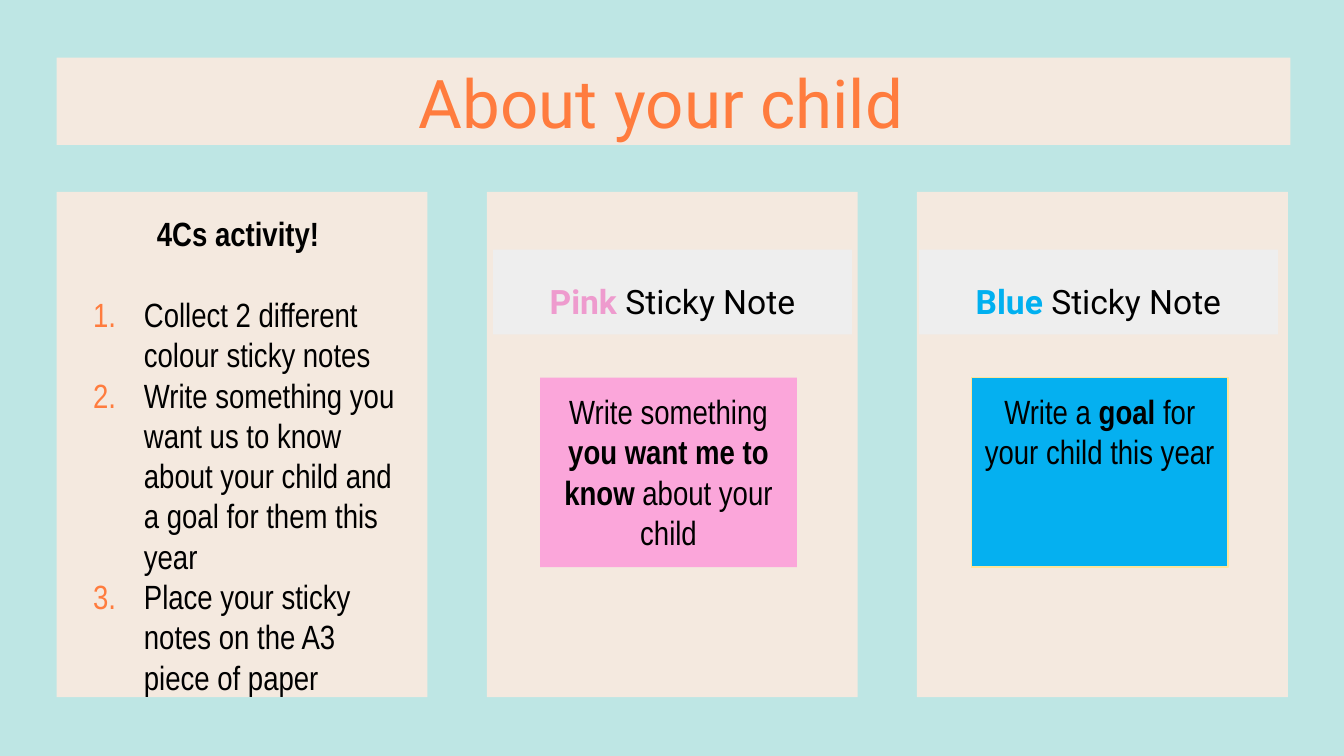
"""Build the slide about the sticky note activity for parents."""
import pptx
import pptx.dml.color
import pptx.enum.shapes
import pptx.enum.text
import pptx.oxml
import pptx.oxml.ns
import pptx.util

Cm, Pt = pptx.util.Cm, pptx.util.Pt
Align, Anchor = pptx.enum.text.PP_ALIGN, pptx.enum.text.MSO_ANCHOR


def tint(code):
    return pptx.dml.color.RGBColor.from_string(code)


def node(tag, **attrs):
    item = pptx.oxml.parse_xml(f'<a:{tag} {pptx.oxml.ns.nsdecls("a")}/>')
    for key, value in attrs.items():
        item.set(key, str(value))
    return item


def write(para, text, font="Arial Narrow", size=18, color="000000", bold=False):
    run = para.add_run()
    run.text = text
    run.font.name = font
    run.font.size = Pt(size)
    run.font.bold = bold
    run.font.color.rgb = tint(color)


class Deck:
    cream, coral, grey, mint = "F4E9DF", "FF7C3E", "EEEEEE", "BEE6E4"

    def __init__(self):
        self.file = pptx.Presentation()
        self.file.slide_width, self.file.slide_height = Cm(25.4), Cm(14.29)
        self.page = self.file.slides.add_slide(self.file.slide_layouts[1])
        self.head, self.body = self.page.placeholders
        fill = self.page.background.fill
        fill.solid()
        fill.fore_color.rgb = tint(self.mint)

    def frame(self, shape, anchor):
        frame = shape.text_frame
        frame.word_wrap = True
        frame.auto_size = pptx.enum.text.MSO_AUTO_SIZE.NONE
        frame.vertical_anchor = anchor
        frame.margin_left = frame.margin_right = Cm(0.25)
        frame.margin_top = frame.margin_bottom = Cm(0.25)
        return frame

    def place(self, shape, box):
        shape.left, shape.top, shape.width, shape.height = map(Cm, box)

    def block(self, box, color, alpha=None, edge=None):
        kind = pptx.enum.shapes.MSO_SHAPE.RECTANGLE
        shape = self.page.shapes.add_shape(kind, *map(Cm, box))
        shape.shadow.inherit = False
        shape.fill.solid()
        shape.fill.fore_color.rgb = tint(color)
        if alpha:
            paint = shape.element.find(".//" + pptx.oxml.ns.qn("a:srgbClr"))
            paint.append(node("alpha", val=alpha * 1000))
        if edge:
            shape.line.color.rgb = tint(edge)
            shape.line.width = Pt(0.75)
        else:
            shape.line.fill.background()
        return shape

    def panel(self, box):
        self.head.element.addprevious(self.block(box, self.cream).element)

    def title(self, box, text):
        self.place(self.head, box)
        para = self.frame(self.head, Anchor.MIDDLE).paragraphs[0]
        para.alignment = Align.CENTER
        write(para, text, font="Roboto", size=36, color=self.coral)

    def steps(self, box, lead, items):
        self.place(self.body, box)
        frame = self.frame(self.body, Anchor.TOP)
        para = frame.paragraphs[0]
        para.alignment = Align.CENTER
        para.space_before, para.space_after = Pt(0), Pt(21.6)
        write(para, lead, bold=True)
        props = para._p.get_or_add_pPr()
        props.set("marL", "0")
        props.set("indent", "0")
        props.append(node("buNone"))
        for item in items:
            para = frame.add_paragraph()
            para.alignment = Align.LEFT
            para.space_before = Pt(0)
            write(para, item)
            props = para._p.get_or_add_pPr()
            props.set("marL", str(Cm(1.35)))
            props.set("indent", str(-Cm(0.96)))
            color = node("buClr")
            color.append(node("srgbClr", val=self.coral))
            props.append(color)
            props.append(node("buFont", typeface="Arial Narrow"))
            props.append(node("buAutoNum", type="arabicPeriod"))

    def card(self, box, color, runs, anchor=Anchor.TOP, **look):
        para = self.frame(self.block(box, color, **look), anchor).paragraphs[0]
        para.alignment = Align.CENTER
        for text, style in runs:
            write(para, text, **style)

    def label(self, box, name, color):
        runs = [(name + " ", dict(font="Roboto", color=color, bold=True)),
                ("Sticky Note", dict(font="Roboto"))]
        self.card(box, self.grey, runs, anchor=Anchor.BOTTOM)


def main():
    deck = Deck()
    deck.panel((1.07, 1.09, 23.32, 1.65))
    for col in range(3):
        deck.panel((1.07 + 8.13 * col, 3.63, 7.01, 9.55))
    deck.title((1.47, 1.09, 22.05, 1.65), "About your child")
    deck.steps((1.12, 3.78, 6.76, 9.75), "4Cs activity!", [
        "Collect 2 different colour sticky notes",
        "Write something you want us to know about your child "
        "and a goal for them this year",
        "Place your sticky notes on the A3 piece of paper",
    ])
    bold = dict(bold=True)
    deck.card((10.21, 7.14, 4.85, 3.58), "FF8AD8", [
        ("Write something ", {}), ("you want me to know", bold),
        (" about your child", {})], alpha=70)
    deck.card((18.36, 7.14, 4.85, 3.58), "05B0F0", [
        ("Write a ", {}), ("goal", bold),
        (" for your child this year", {})], edge="FFE599")
    deck.label((9.32, 4.72, 6.78, 1.6), "Pink", "EE9BCE")
    deck.label((17.37, 4.72, 6.78, 1.6), "Blue", "00B0F0")
    deck.file.save("out.pptx")


if __name__ == "__main__":
    main()
